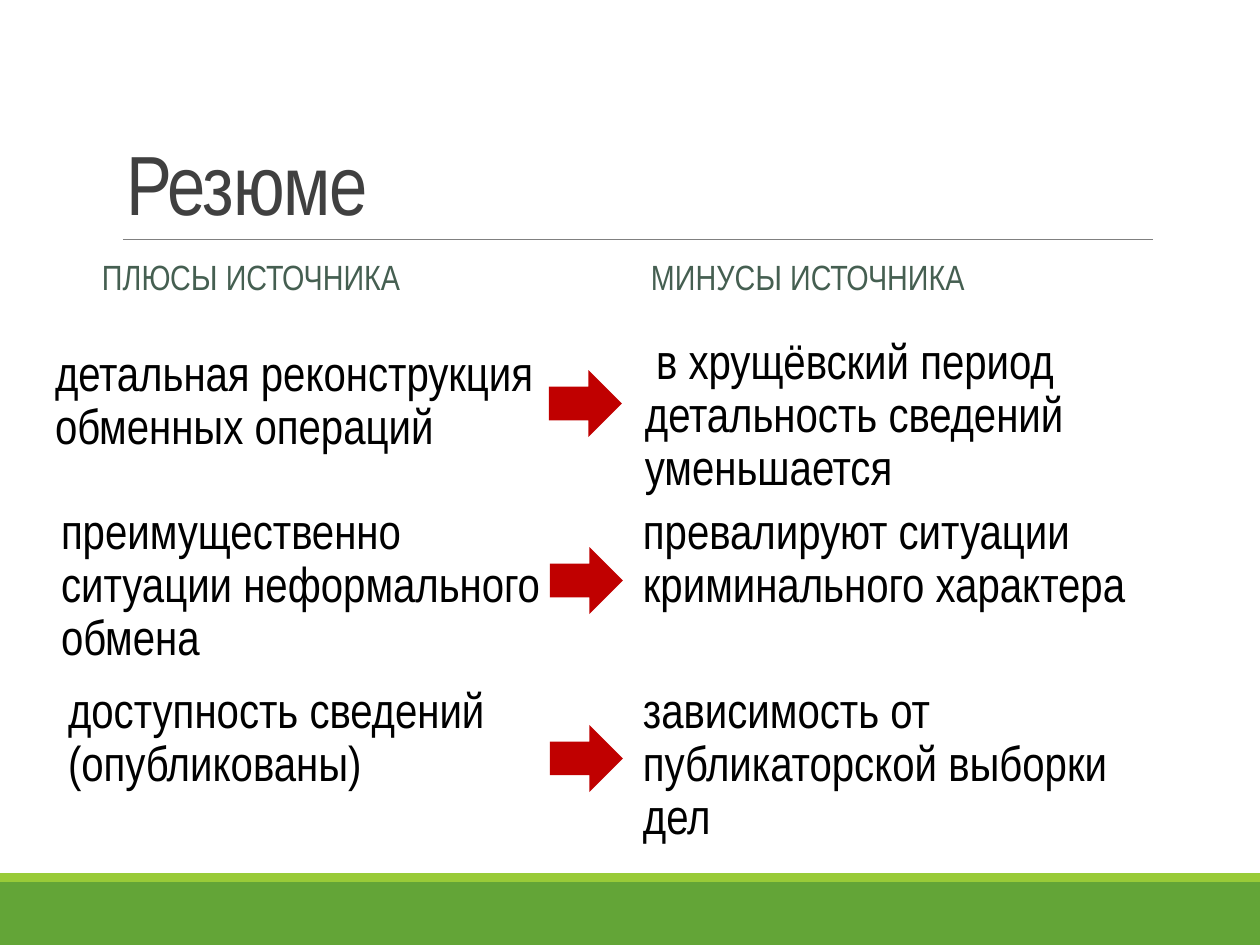
from lxml.etree import SubElement
from pptx import Presentation
from pptx.dml.color import RGBColor
from pptx.enum.shapes import MSO_CONNECTOR, MSO_SHAPE
from pptx.enum.text import MSO_ANCHOR, MSO_AUTO_SIZE, PP_ALIGN
from pptx.oxml.ns import qn
from pptx.util import Emu, Pt

COLORS = {
    "band": "63A537",
    "stripe": "99CB38",
    "rule": "808080",
    "title": "404040",
    "heading": "455F51",
    "body": "000000",
    "arrow": "C00000",
}
FONT = "Arial Narrow"
ROW_HEIGHT = 183
COLUMN_WIDTH = 536


def px(length):
    """Turn whole pixels into EMU."""
    return Emu(round(length * 914400 / 126))


def color(role):
    """Look up a palette colour."""
    return RGBColor.from_string(COLORS[role])


def place(shape, box):
    """Move a shape to a pixel box."""
    shape.left, shape.top, shape.width, shape.height = map(px, box)


def add_block(slide, kind, box, role):
    """Add a flat filled shape."""
    block = slide.shapes.add_shape(kind, *map(px, box))
    block.shadow.inherit = False
    block.fill.solid()
    block.fill.fore_color.rgb = color(role)
    block.line.fill.background()


def write(shape, text, role, size, line=0.9, before=0, after=0,
          anchor=MSO_ANCHOR.TOP, side_inset=13):
    """Fill a shape with one plain left-aligned paragraph."""
    frame = shape.text_frame
    frame.word_wrap = True
    frame.auto_size = MSO_AUTO_SIZE.NONE
    frame.vertical_anchor = anchor
    frame.margin_left = frame.margin_right = px(side_inset)
    frame.margin_top = frame.margin_bottom = px(6)
    frame.text = text
    paragraph = frame.paragraphs[0]
    paragraph.alignment = PP_ALIGN.LEFT
    paragraph.line_spacing = line
    paragraph.space_before, paragraph.space_after = Pt(before), Pt(after)
    properties = paragraph._p.get_or_add_pPr()
    properties.set("marL", "0")
    properties.set("indent", "0")
    SubElement(properties, qn("a:buNone"))
    font = paragraph.font
    font.name, font.size, font.bold = FONT, Pt(size), False
    font.color.rgb = color(role)
    return paragraph


def build_footer(slide, box):
    """Draw the green band with its light stripe on top."""
    left, top, width, height = box
    stripe = 9
    add_block(slide, MSO_SHAPE.RECTANGLE,
              (left, top + stripe, width, height - stripe), "band")
    add_block(slide, MSO_SHAPE.RECTANGLE, (left, top, width, stripe), "stripe")


def build_title(slide, box):
    """Set the title and the rule beneath it."""
    left, top, width, height = box
    title = slide.shapes.title
    place(title, box)
    paragraph = write(title, "Резюме", "title", 48, line=0.85,
                      anchor=MSO_ANCHOR.BOTTOM)
    paragraph.runs[0]._r.get_or_add_rPr().set("spc", "-50")
    bottom = px(top + height)
    rule = slide.shapes.add_connector(
        MSO_CONNECTOR.STRAIGHT, px(left + 10), bottom, px(left + width), bottom)
    rule.line.color.rgb = color("rule")
    rule.line.width = Pt(0.5)
    SubElement(rule._element.spPr, qn("a:effectLst"))


def build_heading(heading, text, box):
    """Set one column heading."""
    place(heading, box)
    write(heading, text, "heading", 20, before=12, after=2,
          anchor=MSO_ANCHOR.MIDDLE)


def build_lead_row(slide, box):
    """Set the first plus and minus in the content placeholders."""
    left, top, width, height = box
    plus, minus = slide.placeholders[2], slide.placeholders[4]
    place(plus, (left, top + 12, 510, height))
    place(minus, (left + width - COLUMN_WIDTH, top, COLUMN_WIDTH, height))
    texts = ("детальная реконструкция обменных операций",
             " в хрущёвский период детальность сведений уменьшается")
    for point, text in zip((plus, minus), texts):
        write(point, text, "body", 28, before=12, after=2, side_inset=0)
    build_arrow(slide, left + 494, top + 39)


def build_row(slide, box, plus, minus, plus_offset, plus_width, arrow_drop):
    """Add a plus, an arrow and a minus as one row."""
    left, top, width, height = box
    points = ((left + plus_offset, plus_width, plus),
              (left + width - COLUMN_WIDTH, COLUMN_WIDTH, minus))
    for point_left, point_width, text in points:
        point = slide.shapes.add_textbox(
            *map(px, (point_left, top, point_width, height)))
        write(point, text, "body", 28, before=10)
    build_arrow(slide, left + 502, top + arrow_drop)


def build_arrow(slide, left, top):
    """Add a red arrow from plus to minus."""
    add_block(slide, MSO_SHAPE.RIGHT_ARROW, (left, top, 73, 67), "arrow")


def main():
    """Build and save the slide."""
    deck = Presentation()
    deck.slide_width, deck.slide_height = px(1260), px(945)
    slide = deck.slides.add_slide(deck.slide_layouts[4])
    build_footer(slide, (0, 873, 1260, 72))
    build_title(slide, (113, 39, 1040, 200))
    build_heading(slide.placeholders[1], "ПЛЮСЫ ИСТОЧНИКА", (89, 223, 533, 113))
    build_heading(slide.placeholders[3], "МИНУСЫ ИСТОЧНИКА", (638, 223, 536, 113))
    build_lead_row(slide, (55, 331, 1126, ROW_HEIGHT))
    build_row(slide, (48, 501, 1118, ROW_HEIGHT),
              "преимущественно ситуации неформального обмена",
              "превалируют ситуации криминального характера", 0, 533, 46)
    build_row(slide, (48, 680, 1118, ROW_HEIGHT),
              "доступность сведений (опубликованы)",
              "зависимость от публикаторской выборки дел", 7, 460, 45)
    deck.save("out.pptx")


if __name__ == "__main__":
    main()
